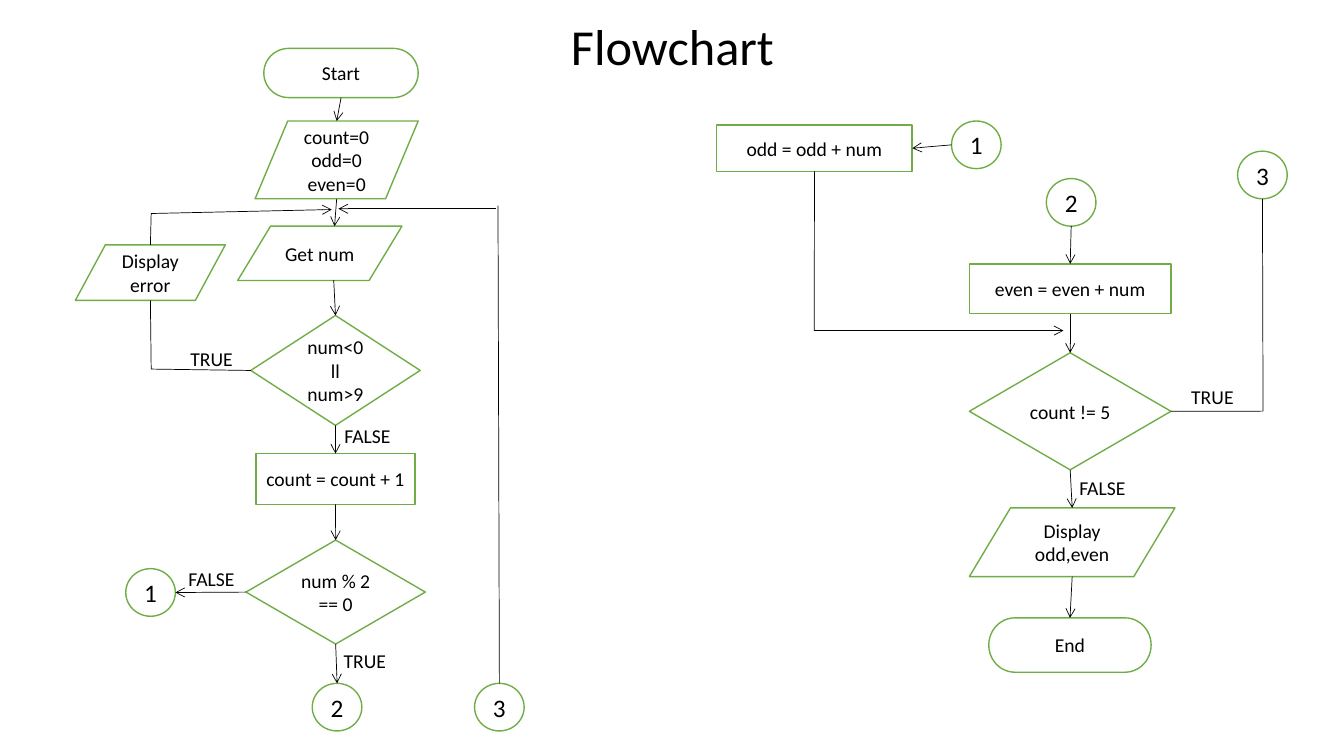
"""Builds a slide with a flowchart that sums odd and even digits."""
import pptx
import pptx.util
import pptx.dml.color
import pptx.enum.shapes
import pptx.enum.text
import pptx.oxml
import pptx.oxml.ns

Cm, Pt = pptx.util.Cm, pptx.util.Pt
SHAPE = pptx.enum.shapes.MSO_SHAPE
ALIGN = pptx.enum.text.PP_ALIGN
ANCHOR = pptx.enum.text.MSO_ANCHOR

COLORS = {"text": "000000", "arrow": "000000", "fill": "FFFFFF", "border": "70AD47"}
FONT = "Calibri"
TOP, LEFT, BOTTOM, RIGHT = range(4)
TERMINAL, DATA = SHAPE.FLOWCHART_TERMINATOR, SHAPE.FLOWCHART_DATA
DECISION, PROCESS = SHAPE.FLOWCHART_DECISION, SHAPE.RECTANGLE
JUMP = SHAPE.FLOWCHART_CONNECTOR
JOINABLE = (TERMINAL, DECISION, PROCESS)
JUMP_SIZE = (1.25, 1.2)
LABEL_HEIGHT = 0.86

TITLE = ("Flowchart", (2.34, 0, 29.21, 2.46))
STEPS = {
    "start": (TERMINAL, "Start", (6.65, 1.22, 3.89, 1.24)),
    "init": (DATA, "count=0\nodd=0\neven=0", (6.43, 3.05, 4.11, 1.96)),
    "get": (DATA, "Get num", (5.99, 5.7, 4.14, 1.37)),
    "range": (DECISION, "num<0 ll num>9", (6.32, 7.95, 4.27, 2.77)),
    "error": (DATA, "Display error", (1.9, 6.17, 3.78, 1.4)),
    "count": (PROCESS, "count = count + 1", (6.45, 11.43, 4.01, 1.28)),
    "parity": (DECISION, "num % 2 == 0", (6.2, 13.61, 4.52, 2.62)),
    "to 1": (JUMP, "1", (3.17, 14.33, *JUMP_SIZE)),
    "to 2": (JUMP, "2", (7.87, 17.22, *JUMP_SIZE)),
    "from 3": (JUMP, "3", (11.96, 17.22, *JUMP_SIZE)),
    "from 1": (JUMP, "1", (23.98, 3.05, *JUMP_SIZE)),
    "from 2": (JUMP, "2", (26.37, 4.5, *JUMP_SIZE)),
    "to 3": (JUMP, "3", (31.19, 3.81, *JUMP_SIZE)),
    "odd": (PROCESS, "odd = odd + num", (18.06, 3.15, 4.93, 1.17)),
    "even": (PROCESS, "even = even + num", (24.43, 6.65, 5.08, 1.25)),
    "again": (DECISION, "count != 5", (24.43, 8.89, 5.08, 2.95)),
    "show": (DATA, "Display odd,even", (24.43, 12.8, 5.18, 1.73)),
    "end": (TERMINAL, "End", (24.92, 15.57, 4.09, 1.37)),
}
ARROWS = [
    (("start", BOTTOM), ("init", TOP)),
    (("init", BOTTOM), (8.43, 5.7)),
    ((8.41, 7.06), ("range", TOP)),
    ((3.81, 5.38), (8.36, 5.28)),
    (("range", BOTTOM), ("count", TOP)),
    (("count", BOTTOM), ("parity", TOP)),
    (("parity", LEFT), ("to 1", RIGHT)),
    (("parity", BOTTOM), ("to 2", TOP)),
    (("from 1", LEFT), ("odd", RIGHT)),
    (("from 2", BOTTOM), ("even", TOP)),
    (("even", BOTTOM), ("again", TOP)),
    ((20.52, 8.33), (26.8, 8.33)),
    (("again", BOTTOM), ("show", TOP)),
    (("show", BOTTOM), ("end", TOP)),
    ((12.5, 5.26), (8.53, 5.26)),
]
LINES = [
    (("range", LEFT), (3.81, 9.3)),
    ((3.81, 9.3), ("error", BOTTOM)),
    (("error", TOP), (3.81, 5.38)),
    (("odd", BOTTOM), (20.52, 8.33)),
    (("again", RIGHT), (31.83, 10.36)),
    ((31.83, 10.36), ("to 3", BOTTOM)),
    (("from 3", TOP), (12.55, 5.18)),
]
LABELS = [
    ("TRUE", 4.55, 8.61, 1.78),
    ("FALSE", 8.43, 10.57, 1.96),
    ("FALSE", 4.5, 14.15, 1.96),
    ("TRUE", 8.41, 16.23, 1.96),
    ("FALSE", 26.95, 11.86, 2.11),
    ("TRUE", 29.77, 9.58, 1.83),
]


def rgb(name):
    return pptx.dml.color.RGBColor.from_string(COLORS[name])


def write(sp, text, size=14, align=ALIGN.CENTER, anchor=ANCHOR.MIDDLE, spacing=None):
    tf = sp.text_frame
    tf.word_wrap = True
    tf.vertical_anchor = anchor
    tf.text = text
    for p in tf.paragraphs:
        p.alignment = align
        p.line_spacing = spacing
        for r in p.runs:
            r.font.name = FONT
            r.font.size = Pt(size)
            r.font.color.rgb = rgb("text")


def add_step(slide, kind, text, box):
    sp = slide.shapes.add_shape(kind, *map(Cm, box))
    sp.shadow.inherit = False
    sp.fill.solid()
    sp.fill.fore_color.rgb = rgb("fill")
    sp.line.color.rgb = rgb("border")
    sp.line.width = Pt(1)
    write(sp, text, size=18 if kind == JUMP else 14)
    return sp


def locate(end):
    if not isinstance(end[0], str):
        return end
    name, side = end
    x, y, w, h = STEPS[name][2]
    across, down = {TOP: (0.5, 0), LEFT: (0, 0.5), BOTTOM: (0.5, 1), RIGHT: (1, 0.5)}[side]
    return x + w * across, y + h * down


def joins(end):
    return isinstance(end[0], str) and STEPS[end[0]][0] in JOINABLE


def add_link(slide, steps, begin, end, arrow):
    points = map(Cm, (*locate(begin), *locate(end)))
    cxn = slide.shapes.add_connector(pptx.enum.shapes.MSO_CONNECTOR.STRAIGHT, *points)
    if joins(begin):
        cxn.begin_connect(steps[begin[0]], begin[1])
    if joins(end):
        cxn.end_connect(steps[end[0]], end[1])
    cxn.line.color.rgb = rgb("arrow")
    cxn.line.width = Pt(0.5)
    props = cxn.element.spPr
    if arrow:
        tail = pptx.oxml.parse_xml(
            '<a:tailEnd %s type="arrow"/>' % pptx.oxml.ns.nsdecls("a"))
        props.find(pptx.oxml.ns.qn("a:ln")).append(tail)
    props.append(pptx.oxml.parse_xml("<a:effectLst %s/>" % pptx.oxml.ns.nsdecls("a")))


def main():
    prs = pptx.Presentation()
    prs.slide_width, prs.slide_height = Cm(33.87), Cm(19.05)
    slide = prs.slides.add_slide(prs.slide_layouts[5])

    text, box = TITLE
    title = slide.shapes.title
    title.left, title.top, title.width, title.height = map(Cm, box)
    write(title, text, size=36, spacing=0.9)

    steps = {name: add_step(slide, *step) for name, step in STEPS.items()}
    for links, arrow in ((ARROWS, True), (LINES, False)):
        for begin, end in links:
            add_link(slide, steps, begin, end, arrow)
    for text, x, y, w in LABELS:
        sp = slide.shapes.add_textbox(*map(Cm, (x, y, w, LABEL_HEIGHT)))
        write(sp, text, align=ALIGN.LEFT, anchor=ANCHOR.TOP)

    prs.save("out.pptx")


if __name__ == "__main__":
    main()
